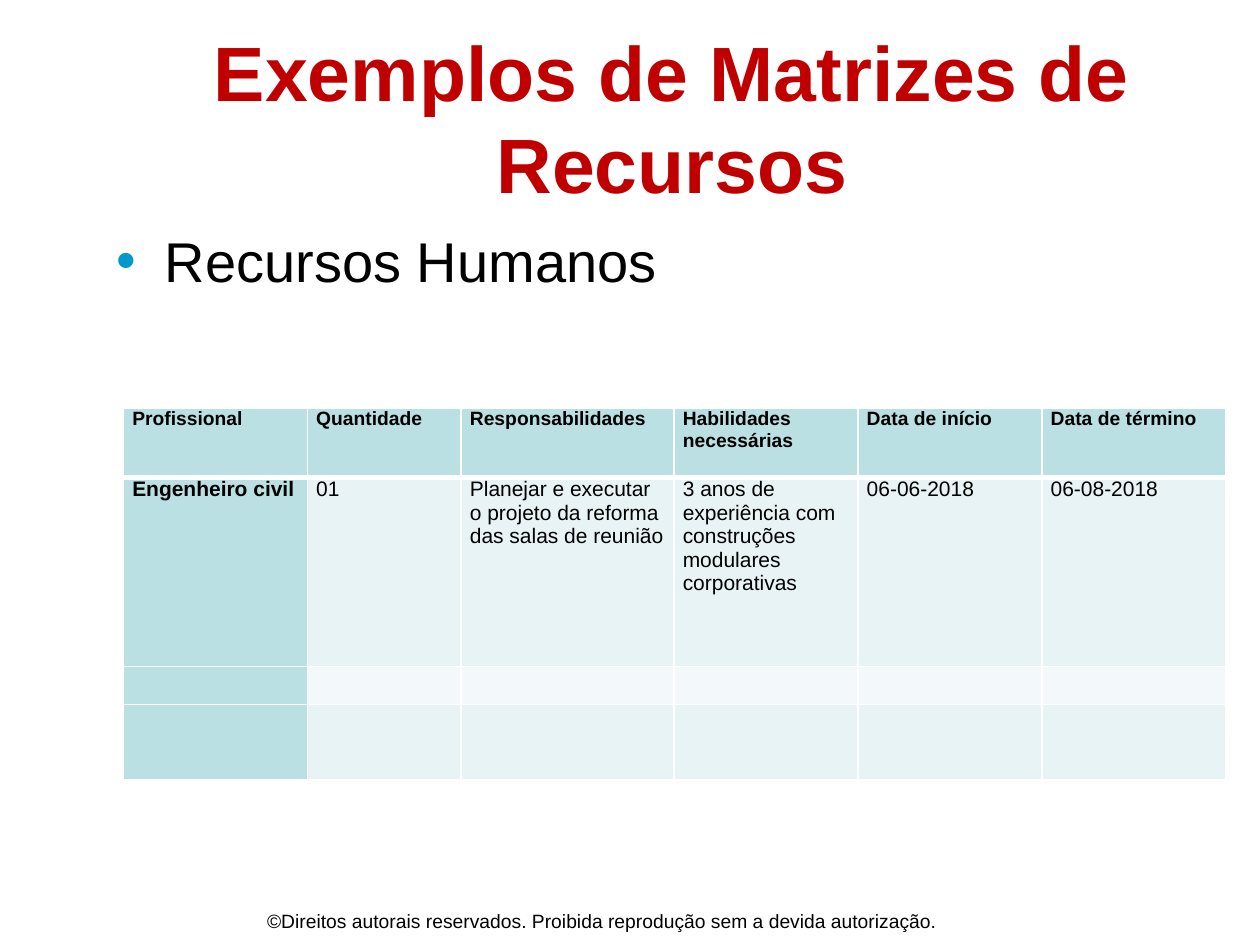
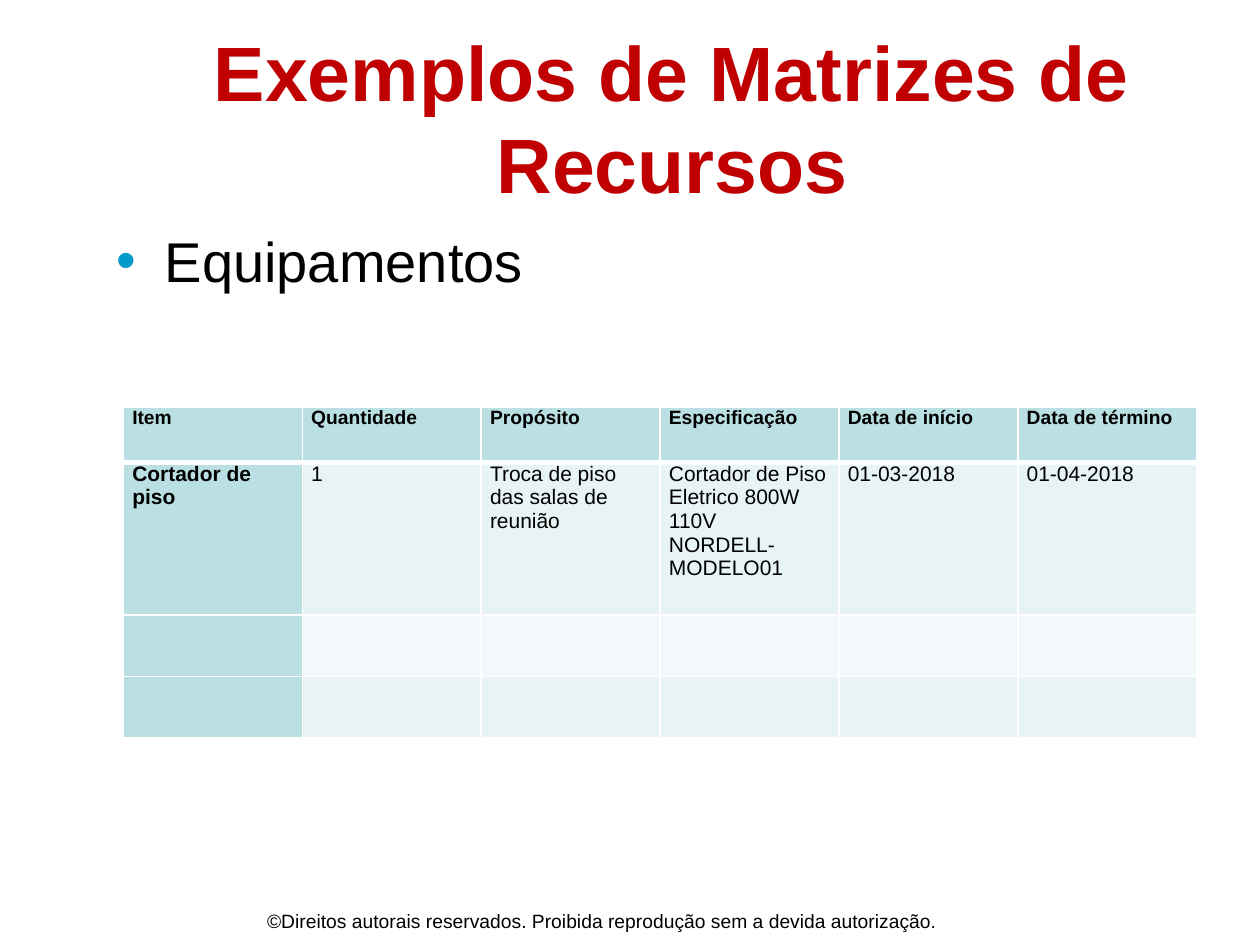
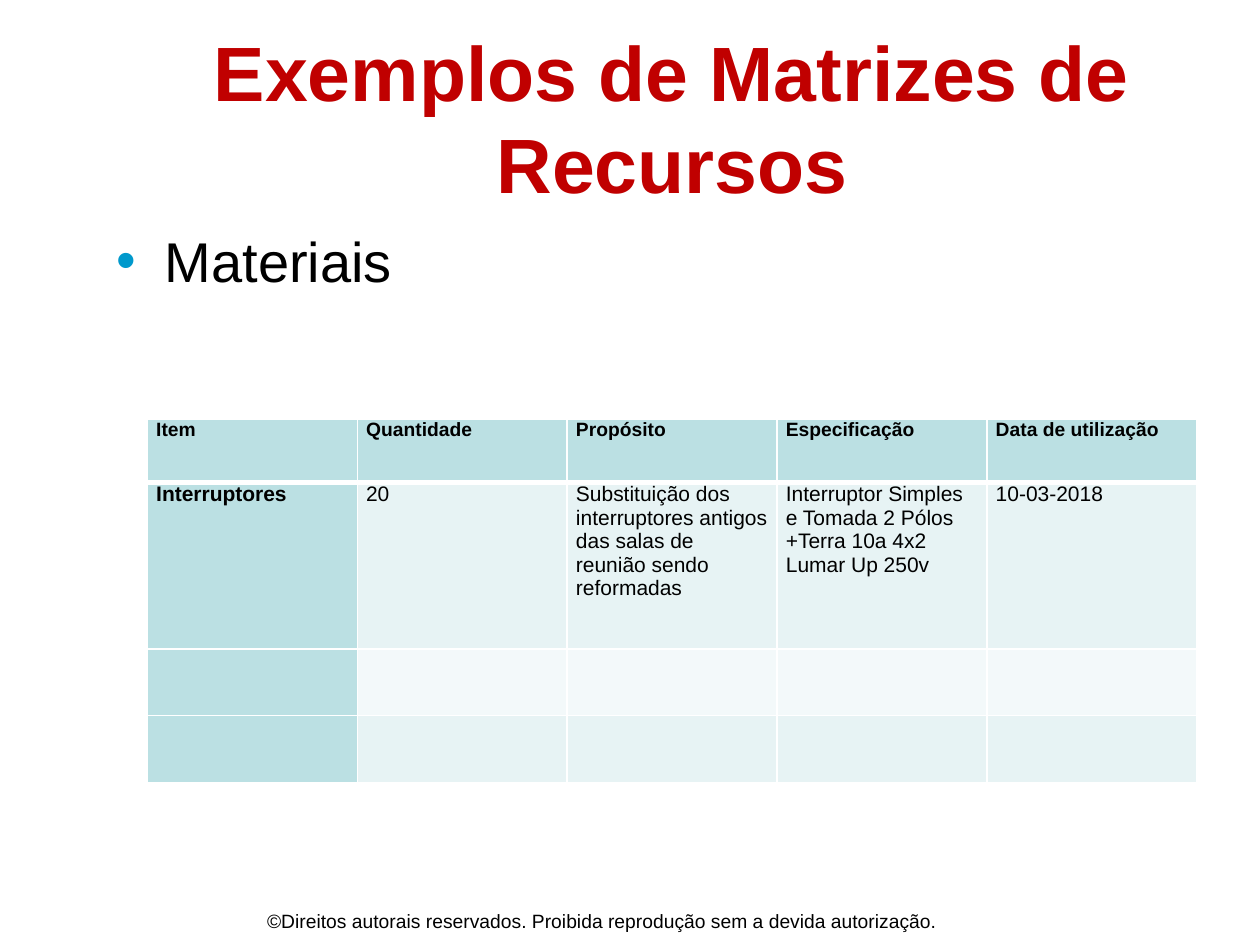
from dataclasses import dataclass

import pptx
import pptx.dml.color
import pptx.enum.text
import pptx.oxml
import pptx.oxml.ns
import pptx.util
from pptx.util import Inches

ALIGN = pptx.enum.text.PP_ALIGN
ANCHOR = pptx.enum.text.MSO_ANCHOR


@dataclass(frozen=True)
class Theme:
    font: str = "Arial"
    title_color: str = "C00000"
    text_color: str = "000000"
    bullet_color: str = "0099CC"
    border_color: str = "FFFFFF"
    heading_fill: str = "BBE0E3"
    band_fills: tuple = ("F3F9FA", "E7F3F4")
    title_size: int = 44
    topic_size: int = 32
    cell_size: int = 12
    small_size: int = 11
    border_width: int = 1
    heading_border_width: int = 3


THEME = Theme()
TITLE = "Exemplos de Matrizes de Recursos"
FOOTER = "©Direitos autorais reservados. Proibida reprodução sem a devida autorização."


def rgb(color):
    return pptx.dml.color.RGBColor.from_string(color)


def write_text(frame, text, size, color=THEME.text_color, bold=False,
               align=ALIGN.LEFT, bullet=None):
    """Fill a text frame, one paragraph for each line of text."""
    frame.word_wrap = True
    for index, line in enumerate(text.split("\n")):
        paragraph = frame.add_paragraph() if index else frame.paragraphs[0]
        paragraph.alignment = align
        if bullet:
            add_bullet(paragraph, bullet)
        run = paragraph.add_run()
        run.text = line
        run.font.name = THEME.font
        run.font.size = pptx.util.Pt(size)
        run.font.bold = bold
        run.font.color.rgb = rgb(color)


def add_bullet(paragraph, character, indent=Inches(0.38)):
    properties = paragraph._p.get_or_add_pPr()
    properties.set("marL", str(indent))
    properties.set("indent", str(-indent))
    namespace = pptx.oxml.ns.nsdecls("a")
    for xml in (
        f'<a:buClr {namespace}><a:srgbClr val="{THEME.bullet_color}"/></a:buClr>',
        f'<a:buFont {namespace} typeface="{THEME.font}"/>',
        f'<a:buChar {namespace} char="{character}"/>',
    ):
        properties.append(pptx.oxml.parse_xml(xml))


def add_border(cell, side, width):
    cell._tc.get_or_add_tcPr().append(pptx.oxml.parse_xml(
        f'<a:ln{side} {pptx.oxml.ns.nsdecls("a")} w="{pptx.util.Pt(width)}">'
        f'<a:solidFill><a:srgbClr val="{THEME.border_color}"/></a:solidFill>'
        f'</a:ln{side}>'))


class Deck:
    def __init__(self, theme):
        self.theme = theme
        self.presentation = pptx.Presentation()
        self.presentation.slide_width = Inches(10)
        self.presentation.slide_height = Inches(7.5)
        self.slide = None

    def add_slide(self, topic):
        """Start a slide with the shared title, topic line and footer."""
        theme = self.theme
        self.slide = self.presentation.slides.add_slide(
            self.presentation.slide_layouts[6])
        self.add_text(1.17, 0.3, 8.33, 1.25, TITLE, anchor=ANCHOR.MIDDLE,
                      size=theme.title_size, color=theme.title_color,
                      bold=True, align=ALIGN.CENTER)
        self.add_text(0.83, 1.75, 8.67, 5.15, topic,
                      size=theme.topic_size, bullet="•")
        self.add_text(0.98, 6.98, 7.6, 0.52, FOOTER, top_inset=0.24,
                      size=theme.small_size, align=ALIGN.CENTER)

    def add_text(self, left, top, width, height, text,
                 anchor=ANCHOR.TOP, top_inset=0.05, **text_format):
        box = self.slide.shapes.add_textbox(
            Inches(left), Inches(top), Inches(width), Inches(height))
        frame = box.text_frame
        frame.vertical_anchor = anchor
        frame.margin_top = Inches(top_inset)
        write_text(frame, text, **text_format)

    def add_matrix(self, left, top, widths, heights, headings, resource):
        """Draw headings, one resource and empty rows for further ones."""
        table = self.slide.shapes.add_table(
            len(heights), len(widths), Inches(left), Inches(top),
            Inches(sum(widths)), Inches(sum(heights))).table
        for column, width in zip(table.columns, widths):
            column.width = Inches(width)
        for row, height in zip(table.rows, heights):
            row.height = Inches(height)
        contents = (headings, resource)
        for row_index in range(len(heights)):
            for column_index in range(len(widths)):
                cell = table.cell(row_index, column_index)
                self.style_cell(cell, row_index, column_index)
                if row_index < len(contents):
                    is_heading = row_index == 0
                    write_text(
                        cell.text_frame, contents[row_index][column_index],
                        size=self.theme.small_size if is_heading else self.theme.cell_size,
                        bold=is_heading or column_index == 0)

    def style_cell(self, cell, row_index, column_index):
        theme = self.theme
        cell.margin_left = cell.margin_right = Inches(0.07)
        cell.margin_top = cell.margin_bottom = 0
        # The thick rule lies between the headings and the first resource
        widths = dict.fromkeys("LRTB", theme.border_width)
        if row_index < 2:
            widths["TB"[row_index == 0]] = theme.heading_border_width
        for side, width in widths.items():
            add_border(cell, side, width)
        is_heading = row_index == 0 or column_index == 0
        cell.fill.solid()
        cell.fill.fore_color.rgb = rgb(
            theme.heading_fill if is_heading else theme.band_fills[row_index % 2])


def main():
    deck = Deck(THEME)
    dates = ["Data de início", "Data de término"]
    item_headings = ["Item", "Quantidade", "Propósito", "Especificação"]

    # People
    deck.add_slide("Recursos Humanos")
    deck.add_matrix(
        0.98, 3.24, [1.46, 1.22, 1.69, 1.46, 1.46, 1.46], [0.55, 1.5, 0.3, 0.6],
        ["Profissional", "Quantidade", "Responsabilidades",
         "Habilidades necessárias", *dates],
        ["Engenheiro civil", "01",
         "Planejar e executar o projeto da reforma das salas de reunião",
         "3 anos de experiência com construções modulares corporativas",
         "06-06-2018", "06-08-2018"])

    # Equipment
    deck.add_slide("Equipamentos")
    deck.add_matrix(
        0.98, 3.23, [1.42] * 6, [0.44, 1.21, 0.49, 0.49],
        [*item_headings, *dates],
        ["Cortador de piso", "1", "Troca de piso das salas de reunião",
         "Cortador de Piso Eletrico 800W 110V\nNORDELL-MODELO01",
         "01-03-2018", "01-04-2018"])

    # Materials
    deck.add_slide("Materiais")
    deck.add_matrix(
        1.17, 3.33, [8.33 / 5] * 5, [0.5, 1.32, 0.53, 0.53],
        [*item_headings, "Data de utilização"],
        ["Interruptores", "20",
         "Substituição dos interruptores antigos das salas de reunião sendo reformadas",
         "Interruptor Simples e Tomada 2 Pólos +Terra 10a 4x2 Lumar Up 250v",
         "10-03-2018"])

    deck.presentation.save("out.pptx")


if __name__ == "__main__":
    main()
